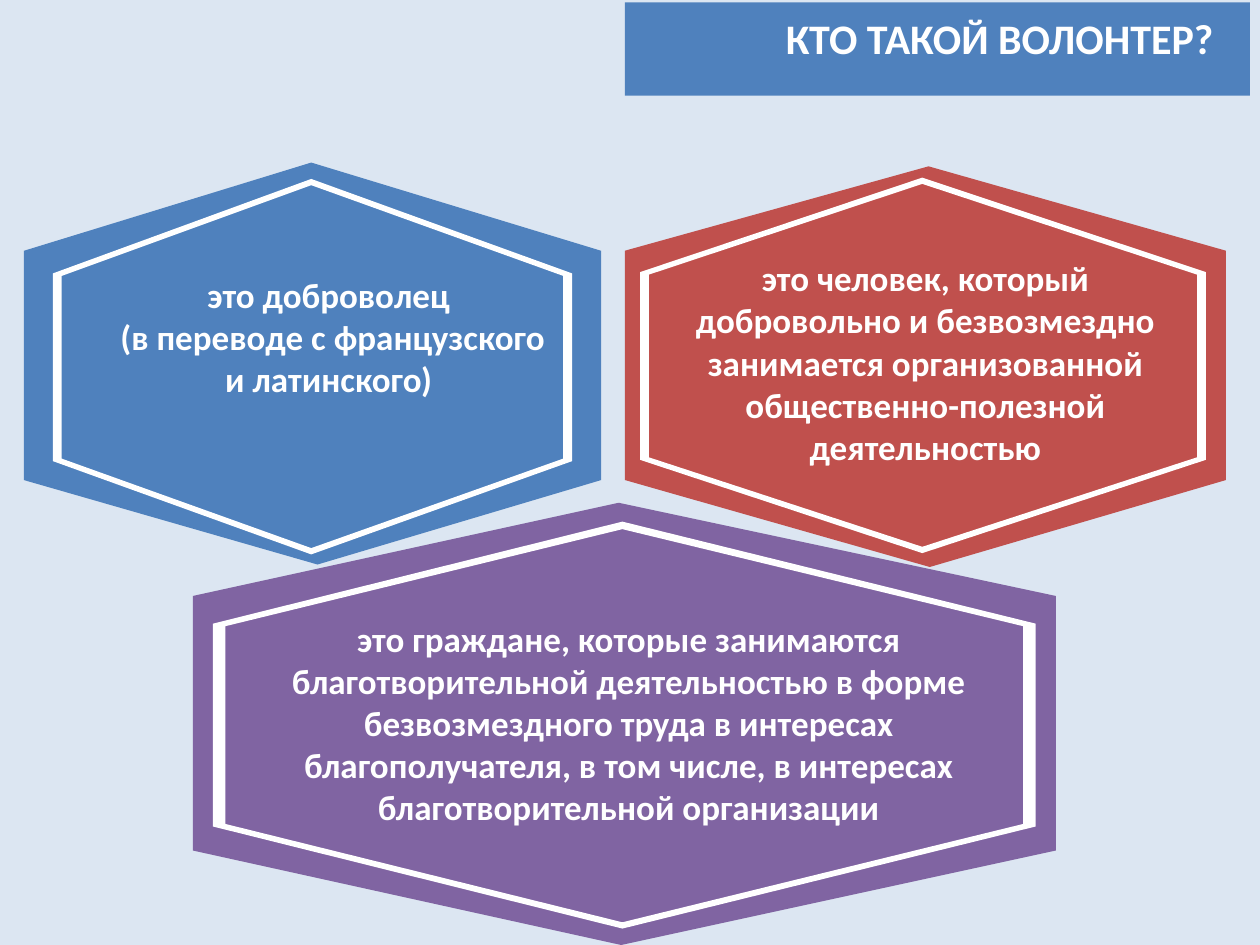
from pptx import Presentation
from pptx.dml.color import RGBColor
from pptx.enum.shapes import MSO_SHAPE
from pptx.enum.text import MSO_ANCHOR, MSO_AUTO_SIZE, PP_ALIGN
from pptx.util import Inches, Pt

THEME = {
    "font": "Calibri", "title_size": 24, "body_size": 20,
    "background": "DCE6F2", "blue": "4F81BD", "red": "C0504D",
    "purple": "8064A2", "white": "FFFFFF",
}

TITLE = "КТО ТАКОЙ ВОЛОНТЕР?"
TITLE_BOX = (4.99, 0.05, 4.74, 0.5)
BANNER_BOX = (4.96, 0.02, 4.96, 0.74)

# Hexagons: left, right, top, upper shoulder, lower shoulder, bottom, top x, bottom x
CARDS = [
    {"color": "blue",
     "body": (0.19, 4.77, 1.29, 1.99, 3.81, 4.48, 2.47, 2.52),
     "frame_outer": (0.42, 4.54, 1.42, 2.17, 3.66, 4.4, 2.47, 2.47),
     "frame_inner": (0.49, 4.47, 1.47, 2.19, 3.64, 4.35, 2.47, 2.47),
     "text_box": (0.83, 2.12, 3.62, 1.11),
     "text": ["это доброволец ", "(в переводе с французского и латинского) "]},
    {"color": "purple",
     "body": (1.53, 8.38, 3.99, 4.73, 6.75, 7.5, 4.91, 4.93),
     "frame_outer": (1.69, 8.22, 4.14, 4.95, 6.56, 7.37, 4.94, 4.94),
     "frame_inner": (1.79, 8.12, 4.2, 4.97, 6.54, 7.32, 4.94, 4.94),
     "text_box": (1.8, 4.85, 6.38, 1.78),
     "text": ["это граждане, которые занимаются благотворительной деятельностью "
              "в форме безвозмездного труда в интересах благополучателя, "
              "в том числе, в интересах благотворительной организации"]},
    {"color": "red",
     "body": (4.96, 9.73, 1.32, 1.99, 3.81, 4.5, 7.37, 7.38),
     "frame_outer": (5.08, 9.57, 1.41, 2.16, 3.65, 4.39, 7.32, 7.32),
     "frame_inner": (5.15, 9.5, 1.46, 2.18, 3.63, 4.34, 7.32, 7.32),
     "text_box": (5.33, 1.99, 4.03, 1.78),
     "text": ["это человек, который добровольно и безвозмездно занимается "
              "организованной общественно-полезной деятельностью"]},
]


def color(name):
    return RGBColor.from_string(THEME[name])


def inches(values):
    return [Inches(value) for value in values]


def paint(shape, name):
    shape.fill.solid()
    shape.fill.fore_color.rgb = color(name)
    shape.line.fill.background()
    shape.shadow.inherit = False


def hexagon(left, right, top, upper, lower, bottom, top_x, bottom_x):
    corners = [(left, upper), (left, lower), (bottom_x, bottom),
               (right, lower), (right, upper), (top_x, top)]
    return [inches(corner) for corner in corners]


def add_outline(page, contours, name):
    first, *holes = contours
    builder = page.shapes.build_freeform(*first[0])
    builder.add_line_segments(first[1:], close=True)
    for hole in holes:
        builder.move_to(*hole[0])
        builder.add_line_segments(hole[1:], close=True)
    paint(builder.convert_to_shape(), name)


def write(box, lines, size, align):
    frame = box.text_frame
    frame.text = "\n".join(lines)
    frame.word_wrap = True
    frame.auto_size = MSO_AUTO_SIZE.NONE
    frame.vertical_anchor = MSO_ANCHOR.TOP
    for para in frame.paragraphs:
        para.alignment = align
        para.font.name = THEME["font"]
        para.font.size = Pt(THEME[size])
        para.font.bold = True
        para.font.color.rgb = color("white")


def main():
    deck = Presentation()
    deck.slide_width, deck.slide_height = Inches(10), Inches(7.5)
    page = deck.slides.add_slide(deck.slide_layouts[5])
    page.background.fill.solid()
    page.background.fill.fore_color.rgb = color("background")

    # Title on its banner
    title = page.shapes.title
    title.left, title.top, title.width, title.height = inches(TITLE_BOX)
    write(title, [TITLE], "title_size", PP_ALIGN.RIGHT)
    banner = page.shapes.add_shape(MSO_SHAPE.RECTANGLE, *inches(BANNER_BOX))
    paint(banner, "blue")
    title.element.addprevious(banner.element)

    # Coloured hexagons
    for card in CARDS:
        add_outline(page, [hexagon(*card["body"])], card["color"])

    # White frames: the inner contour runs the other way to cut a hole
    for card in CARDS:
        outer, inner = hexagon(*card["frame_outer"]), hexagon(*card["frame_inner"])
        add_outline(page, [outer, inner[::-1]], "white")

    # Definitions
    for card in CARDS:
        box = page.shapes.add_textbox(*inches(card["text_box"]))
        write(box, card["text"], "body_size", PP_ALIGN.CENTER)

    deck.save("out.pptx")


if __name__ == "__main__":
    main()
